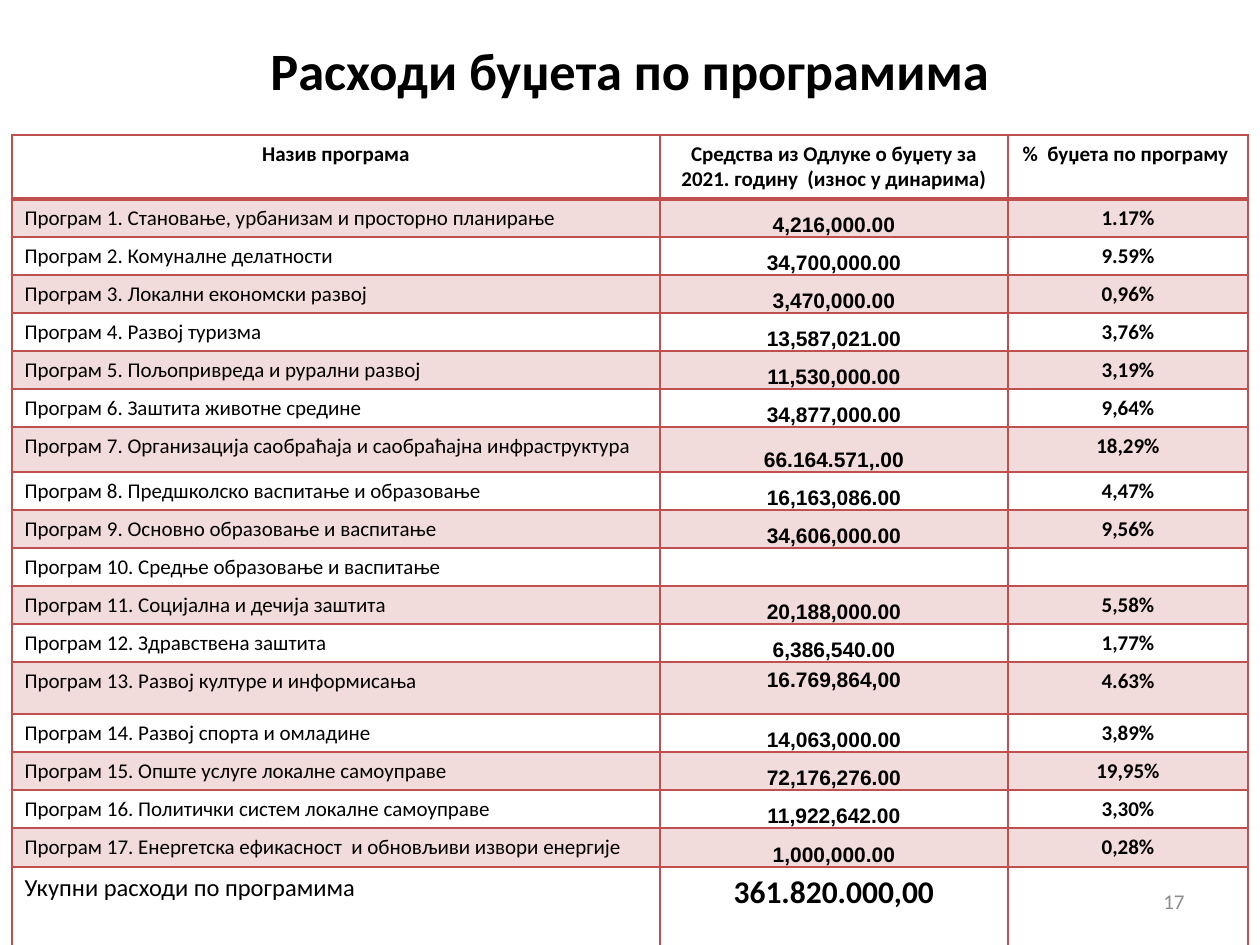
from dataclasses import dataclass

from lxml import etree
from pptx import Presentation
from pptx.dml.color import RGBColor
from pptx.enum.text import MSO_ANCHOR, PP_ALIGN
from pptx.oxml.ns import qn
from pptx.util import Emu, Pt

LEFT, CENTER, RIGHT = PP_ALIGN.LEFT, PP_ALIGN.CENTER, PP_ALIGN.RIGHT
TOP, MIDDLE, BOTTOM = MSO_ANCHOR.TOP, MSO_ANCHOR.MIDDLE, MSO_ANCHOR.BOTTOM
EMU_PER_PX = 914400 / 126


@dataclass(frozen=True)
class Theme:
    font: str = "Calibri"
    number_font: str = "Arial"
    text: str = "000000"
    muted: str = "8C8C8C"
    border: str = "C0504D"
    band: str = "F2DCDB"
    title_size: int = 30
    body_size: int = 12
    total_size: int = 14
    total_amount_size: int = 18
    line: int = 1
    header_line: int = 2


THEME = Theme()

HEADERS = [
    "Назив програма",
    "Средства из Одлуке о буџету за 2021. годину  (износ у динарима)",
    "%  буџета по програму ",
]
PROGRAMS = [
    ("Становање, урбанизам и просторно планирање", "4,216,000.00", "1.17%"),
    ("Комуналне делатности", "34,700,000.00", "9.59%"),
    ("Локални економски развој", "3,470,000.00", "0,96%"),
    ("Развој туризма", "13,587,021.00", "3,76%"),
    ("Пољопривреда и рурални развој", "11,530,000.00", "3,19%"),
    ("Заштита животне средине", "34,877,000.00", "9,64%"),
    ("Организација саобраћаја и саобраћајна инфраструктура", "66.164.571,.00", "18,29%"),
    ("Предшколско васпитање и образовање", "16,163,086.00", "4,47%"),
    ("Основно образовање и васпитање", "34,606,000.00", "9,56%"),
    ("Средње образовање и васпитање", "", ""),
    ("Социјална и дечија заштита", "20,188,000.00", "5,58%"),
    ("Здравствена заштита", "6,386,540.00", "1,77%"),
    ("Развој културе и информисања", "16.769,864,00", "4.63%"),
    ("Развој спорта и омладине", "14,063,000.00", "3,89%"),
    ("Опште услуге локалне самоуправе", "72,176,276.00", "19,95%"),
    ("Политички систем локалне самоуправе", "11,922,642.00", "3,30%"),
    ("Енергетска ефикасност  и обновљиви извори енергије", "1,000,000.00", "0,28%"),
]
TOTAL = ("Укупни расходи по програмима", "361.820.000,00", "")

COLUMN_WIDTHS = [648, 348, 240]
HEADER_HEIGHT, ROW_HEIGHT, TOTAL_HEIGHT = 64, 38, 81
TALL_ROWS = {7: 45, 13: 52, 17: 39}
TOP_ALIGNED_PROGRAM = 13


def px(value):
    return Emu(round(value * EMU_PER_PX))


def format_text(text_frame, text, size, align, bold=False, font=THEME.font, color=THEME.text):
    text_frame.text = text
    paragraph = text_frame.paragraphs[0]
    paragraph.alignment = align
    for run in paragraph.runs:
        run.font.size = Pt(size)
        run.font.name = font
        run.font.bold = bold
        run.font.color.rgb = RGBColor.from_string(color)
    if not text:
        # An empty cell needs its own type size, or the row grows
        etree.SubElement(paragraph._p, qn("a:endParaRPr"), sz=str(size * 100))


def add_text(slide, box, text, size, align, **style):
    shape = slide.shapes.add_textbox(*map(px, box))
    text_frame = shape.text_frame
    text_frame.word_wrap = True
    text_frame.vertical_anchor = MIDDLE
    format_text(text_frame, text, size, align, **style)


def set_borders(cell, top, bottom):
    properties = cell._tc.get_or_add_tcPr()
    sides = {"lnL": THEME.line, "lnR": THEME.line, "lnT": top, "lnB": bottom}
    for index, (tag, width) in enumerate(sides.items()):
        line = etree.Element(qn(f"a:{tag}"), w=str(Pt(width)))
        fill = etree.SubElement(line, qn("a:solidFill"))
        etree.SubElement(fill, qn("a:srgbClr"), val=THEME.border)
        properties.insert(index, line)


def fill_cell(cell, text, size=THEME.body_size, align=CENTER, banded=False,
              top=THEME.line, bottom=THEME.line, **style):
    format_text(cell.text_frame, text, size, align, **style)
    cell.vertical_anchor = TOP
    if banded:
        cell.fill.solid()
        cell.fill.fore_color.rgb = RGBColor.from_string(THEME.band)
    else:
        cell.fill.background()
    set_borders(cell, top, bottom)


def sit_on_bottom(cell):
    cell.vertical_anchor = BOTTOM
    cell.margin_left = cell.margin_right = cell.margin_top = cell.margin_bottom = 0


def add_program_row(table, number, name, amount, share):
    banded = number % 2 == 1
    top = THEME.header_line if number == 1 else THEME.line
    cells = [table.cell(number, column) for column in range(3)]
    fill_cell(cells[0], f"Програм {number}. {name}", align=LEFT, banded=banded, top=top)
    fill_cell(cells[1], amount, banded=banded, top=top, bold=True, font=THEME.number_font)
    fill_cell(cells[2], share, banded=banded, top=top, bold=True)
    if amount and number != TOP_ALIGNED_PROGRAM:
        sit_on_bottom(cells[1])


def add_budget_table(slide, left, top):
    heights = [HEADER_HEIGHT]
    heights += [TALL_ROWS.get(number, ROW_HEIGHT) for number in range(1, len(PROGRAMS) + 1)]
    heights.append(TOTAL_HEIGHT)
    box = (left, top, sum(COLUMN_WIDTHS), sum(heights))
    table = slide.shapes.add_table(len(heights), len(COLUMN_WIDTHS), *map(px, box)).table
    table.first_row = table.horz_banding = False
    for column, width in zip(table.columns, COLUMN_WIDTHS):
        column.width = px(width)
    for row, height in zip(table.rows, heights):
        row.height = px(height)

    # Header
    for column, text in enumerate(HEADERS):
        fill_cell(table.cell(0, column), text, bottom=THEME.header_line, bold=True)

    # Programs
    for number, program in enumerate(PROGRAMS, 1):
        add_program_row(table, number, *program)

    # Total
    name, amount, share = table.rows[len(heights) - 1].cells
    fill_cell(name, TOTAL[0], size=THEME.total_size, align=LEFT)
    fill_cell(amount, TOTAL[1], size=THEME.total_amount_size, bold=True)
    fill_cell(share, TOTAL[2])


def main():
    presentation = Presentation()
    presentation.slide_width, presentation.slide_height = px(1260), px(945)
    slide = presentation.slides.add_slide(presentation.slide_layouts[6])

    # Title and slide number
    add_text(slide, (93, 16, 1074, 107), "Расходи буџета по програмима",
             THEME.title_size, CENTER, bold=True)
    add_text(slide, (903, 876, 294, 50), "17", THEME.body_size, RIGHT, color=THEME.muted)

    # Budget by program
    add_budget_table(slide, 12, 135)

    presentation.save("out.pptx")


if __name__ == "__main__":
    main()
